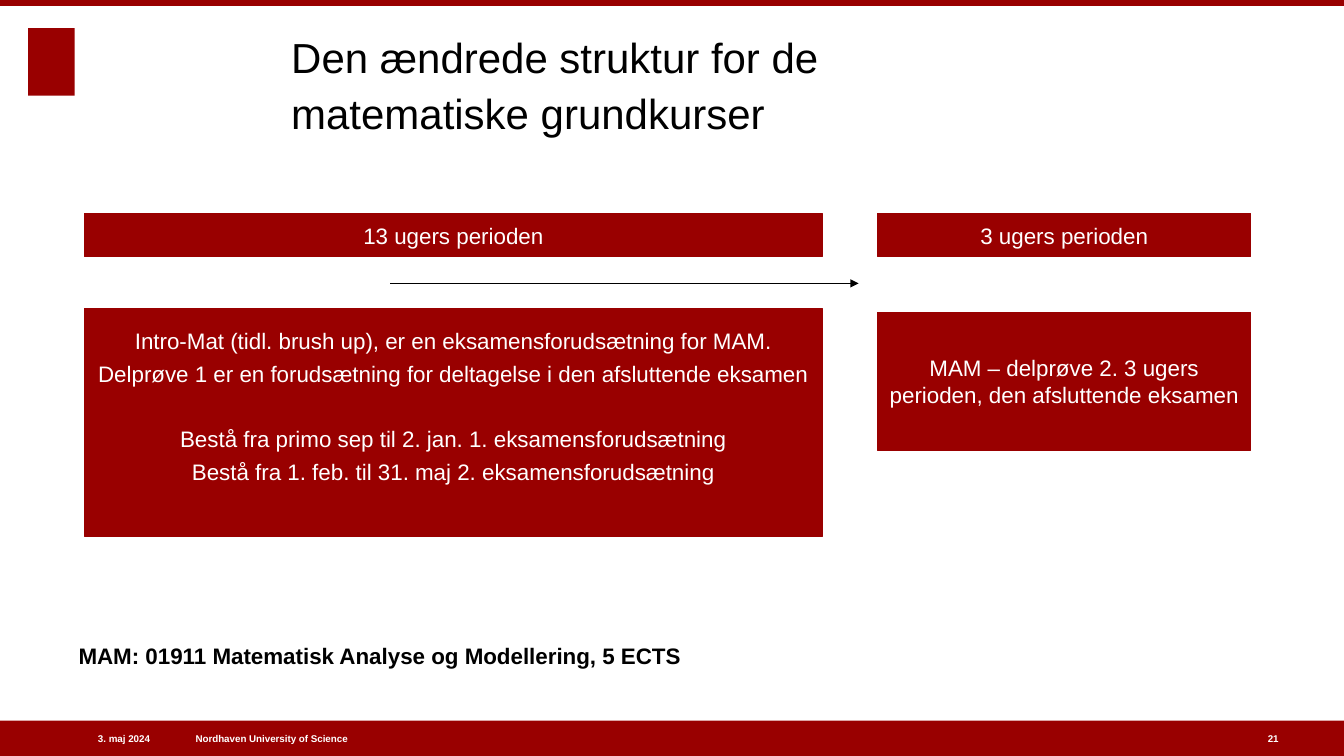
from lxml import etree
from pptx import Presentation
from pptx import util as u
from pptx.dml.color import RGBColor
from pptx.enum import shapes, text
from pptx.oxml.ns import qn

RED, WHITE, BLACK = "990000", "FFFFFF", "000000"
WIDTH, HEIGHT = 33.87, 19.05
LEFT, CENTER, RIGHT = text.PP_ALIGN.LEFT, text.PP_ALIGN.CENTER, text.PP_ALIGN.RIGHT
TOP, MIDDLE = text.MSO_ANCHOR.TOP, text.MSO_ANCHOR.MIDDLE


def rgb(hex_color):
    return RGBColor.from_string(hex_color)


def cm(*lengths):
    return [u.Cm(length) for length in lengths]


def set_text(sp, lines, size, color, bold=False, align=LEFT, anchor=MIDDLE,
             insets=(0, 0, 0, 0)):
    """Write one paragraph per line; insets are left, top, right, bottom."""
    tf = sp.text_frame
    tf.word_wrap = True
    tf.vertical_anchor = anchor
    tf.margin_left, tf.margin_top, tf.margin_right, tf.margin_bottom = cm(*insets)
    for i, line in enumerate(lines):
        p = tf.add_paragraph() if i else tf.paragraphs[0]
        p.text = line
        p.alignment = align
        p.font.name, p.font.size, p.font.bold = "Arial", u.Pt(size), bold
        p.font.color.rgb = rgb(color)
    return tf.paragraphs


def add_text(s, box, lines, size, color, **style):
    return set_text(s.shapes.add_textbox(*cm(*box)), lines, size, color, **style)


def add_bar(s, box, outlined=False):
    sp = s.shapes.add_shape(shapes.MSO_SHAPE.RECTANGLE, *cm(*box))
    sp.shadow.inherit = False
    sp.fill.solid()
    sp.fill.fore_color.rgb = rgb(RED)
    if outlined:
        sp.line.color.rgb = rgb(RED)
        sp.line.width = u.Pt(0.75)
    else:
        sp.line.fill.background()
    return sp


def add_card(s, box, lines, bottom=0.13):
    sp = add_bar(s, box, outlined=True)
    paragraphs = set_text(sp, lines, 16, WHITE, align=CENTER,
                          insets=(0.25, 0.13, 0.25, bottom))
    for p in paragraphs:
        p.space_before = u.Pt(4.3)
    return paragraphs


def add_arrow(s, x1, x2, y):
    line = s.shapes.add_connector(shapes.MSO_CONNECTOR.STRAIGHT, *cm(x1, y, x2, y))
    line.line.color.rgb = rgb(BLACK)
    line.line.width = u.Pt(0.75)
    etree.SubElement(line.line._get_or_add_ln(), qn("a:tailEnd"), type="triangle")
    etree.SubElement(line._element.spPr, qn("a:effectLst"))


def add_header(s, x, y, w):
    add_bar(s, (x, y, w, 0.15))
    # Plain emblem block
    add_bar(s, (x + 0.71, y + 0.71, 1.17, 1.7))
    # Title
    p, = add_text(s, (x + 7.34, y + 0.53, 15.19, 4.4),
                  ["Den ændrede struktur for de matematiske grundkurser"],
                  30, BLACK, anchor=TOP, insets=(0, 0.15, 0, 0))
    p.line_spacing = 1.1


def add_periods(s, x, y, w):
    long_w, short_w, header_h = 18.59, 9.4, 1.09
    short_x = x + w - short_w
    # Period headings
    add_card(s, (x, y, long_w, header_h), ["13 ugers perioden"])
    add_card(s, (short_x, y, short_w, header_h), ["3 ugers perioden"])
    # Arrow towards the final period
    add_arrow(s, x + 7.7, short_x - 0.48, y + 1.76)
    # Requirements, with a gap before the dates
    paragraphs = add_card(s, (x, y + 2.39, long_w, 5.74), [
        "Intro-Mat (tidl. brush up), er en eksamensforudsætning for MAM.",
        "Delprøve 1 er en forudsætning for deltagelse i den afsluttende eksamen",
        "Bestå fra primo sep til 2. jan. 1. eksamensforudsætning",
        "Bestå fra 1. feb. til 31. maj 2. eksamensforudsætning",
    ], bottom=0.95)
    paragraphs[2].space_before = u.Pt(27)
    add_card(s, (short_x, y + 2.49, short_w, 3.48),
             ["MAM – delprøve 2. 3 ugers perioden, den afsluttende eksamen"])


def add_course_note(s, x, y, w):
    p, = add_text(s, (x, y, w, 0.76),
                  ["MAM: 01911 Matematisk Analyse og Modellering, 5 ECTS"],
                  16, BLACK, bold=True, anchor=TOP, insets=(0.25, 0.13, 0.25, 0.13))
    p.line_spacing = u.Pt(14)


def add_footer(s, x, y, w, h):
    add_bar(s, (x, y, w, h))
    for left, width, line, align in [
        (0.71, 3.07, "3. maj 2024", RIGHT),
        (4.93, 9.45, "Nordhaven University of Science", LEFT),
        (31.95, 1.19, "21", LEFT),
    ]:
        add_text(s, (x + left, y, width, h), [line], 7, WHITE, bold=True, align=align)


def main():
    prs = Presentation()
    prs.slide_width, prs.slide_height = cm(WIDTH, HEIGHT)
    s = prs.slides.add_slide(prs.slide_layouts[6])
    add_header(s, 0, 0, WIDTH)
    add_periods(s, 2.13, 5.38, 29.39)
    add_course_note(s, 1.73, 16.23, 16.94)
    add_footer(s, 0, HEIGHT - 0.89, WIDTH, 0.89)
    prs.save("out.pptx")


if __name__ == "__main__":
    main()
